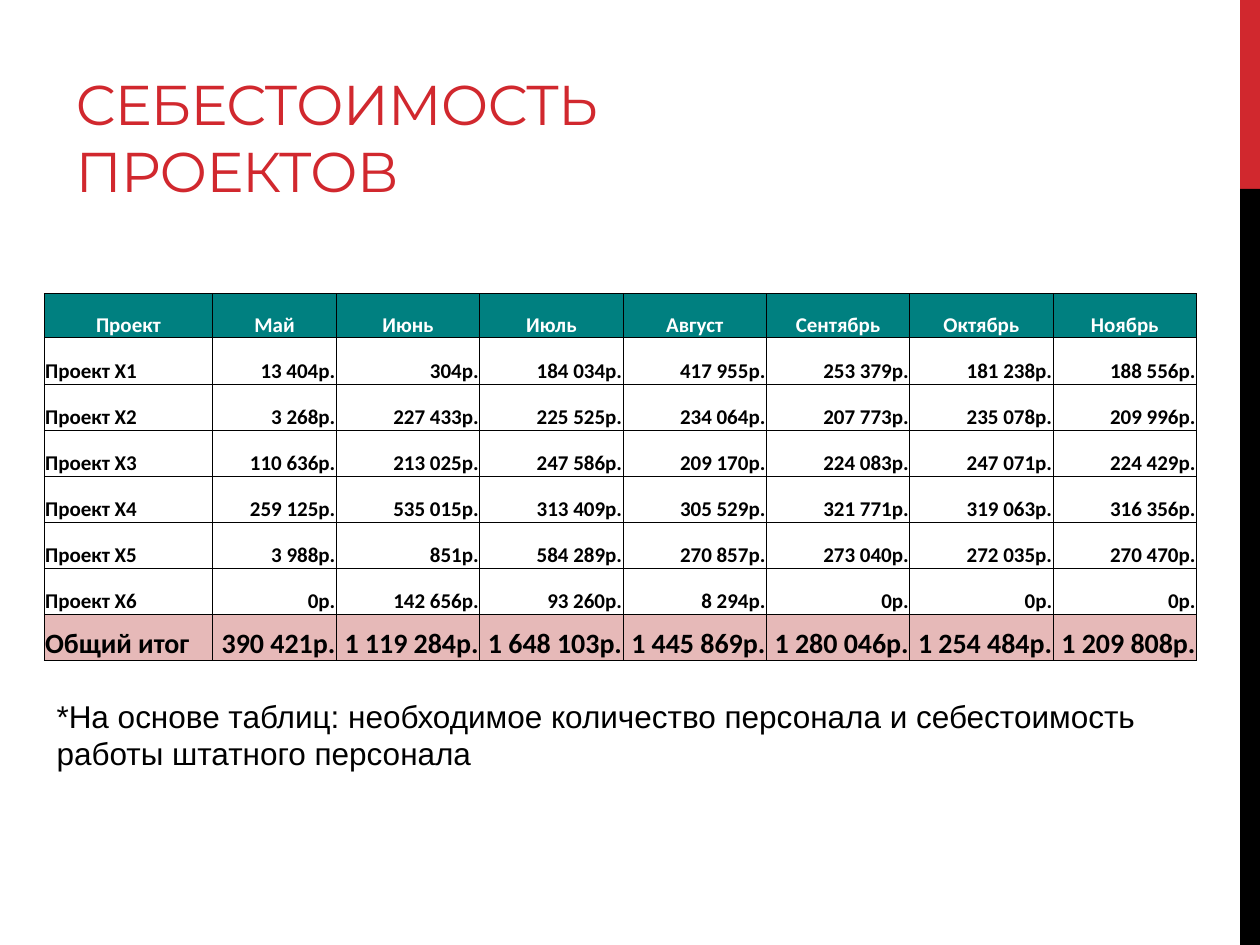
"""Build the slide with the monthly cost of each project."""
from lxml.etree import SubElement as Sub
from pptx import Presentation
from pptx.dml.color import RGBColor as RGB
from pptx.enum.shapes import MSO_SHAPE as Kind
from pptx.enum.text import MSO_ANCHOR as Anchor, PP_ALIGN as Align
from pptx.oxml.ns import qn
from pptx.util import Cm, Pt

RED = RGB(0xD1, 0x28, 0x2E)
BLACK = RGB(0, 0, 0)
WHITE = RGB(255, 255, 255)
TEAL = RGB(0, 0x80, 0x80)
PINK = RGB(0xE6, 0xB9, 0xB8)

HEAD = ["Проект", "Май", "Июнь", "Июль", "Август", "Сентябрь", "Октябрь", "Ноябрь"]
COSTS = [
    ("Проект Х1", 13404, 304, 184034, 417955, 253379, 181238, 188556),
    ("Проект Х2", 3268, 227433, 225525, 234064, 207773, 235078, 209996),
    ("Проект Х3", 110636, 213025, 247586, 209170, 224083, 247071, 224429),
    ("Проект Х4", 259125, 535015, 313409, 305529, 321771, 319063, 316356),
    ("Проект Х5", 3988, 851, 584289, 270857, 273040, 272035, 270470),
    ("Проект Х6", 0, 142656, 93260, 8294, 0, 0, 0),
    ("Общий итог", 390421, 1119284, 1648103, 1445869, 1280046, 1254484, 1209808),
]
ROWS = [HEAD] + [[name] + [f"{n:,}р.".replace(",", " ") for n in nums]
                 for name, *nums in COSTS]
WIDTHS = [3.4, 2.49] + [2.89] * 6
HEIGHTS = [0.89] + [0.93] * 7
CELL = {"vertical_anchor": Anchor.BOTTOM, "margin_left": Cm(0.02),
        "margin_right": Cm(0.02), "margin_top": Cm(0.02), "margin_bottom": 0}


def put(obj, vals):
    for key, val in vals.items():
        setattr(obj, key, val)


def write(frame, text, color, vals, align=Align.LEFT):
    para = frame.paragraphs[0]
    para.alignment = align
    run = para.add_run()
    run.text = text
    put(run.font, vals)
    run.font.color.rgb = color
    return run


deck = Presentation()
put(deck, {"slide_width": Cm(25.4), "slide_height": Cm(19.05)})
slide = deck.slides.add_slide(deck.slide_layouts[5])
shapes = slide.shapes

for top, high, color in [(0, 3.81, RED), (3.81, 15.24, BLACK)]:
    bar = shapes.add_shape(Kind.RECTANGLE, Cm(25), Cm(top), Cm(0.4), Cm(high))
    bar.shadow.inherit = False
    bar.fill.solid()
    bar.fill.fore_color.rgb = color
    bar.line.fill.background()

title = shapes.title
put(title, {"left": Cm(1.27), "top": Cm(0.43), "width": Cm(16.08), "height": Cm(3.81)})
put(title.text_frame, {"vertical_anchor": Anchor.BOTTOM, "word_wrap": True})
run = write(title.text_frame, "СЕБЕСТОИМОСТЬ ПРОЕКТОВ", RED,
            {"name": "Montserrat", "size": Pt(32)})
run.font._element.set("spc", "-60")

note = shapes.add_textbox(Cm(0.89), Cm(13.92), Cm(23.6), Cm(1.8)).text_frame
note.word_wrap = True
write(note, "*На основе таблиц: необходимое количество персонала и себестоимость "
      "работы штатного персонала", BLACK, {"name": "Arial", "size": Pt(18)})

table = shapes.add_table(len(ROWS), len(HEAD), Cm(0.89), Cm(5.92),
                         Cm(sum(WIDTHS)), Cm(sum(HEIGHTS))).table
put(table, {"first_row": False, "horz_banding": False})
for col, wide in zip(table.columns, WIDTHS):
    col.width = Cm(wide)
for row, high in zip(table.rows, HEIGHTS):
    row.height = Cm(high)

for i, texts in enumerate(ROWS):
    first, last = i == 0, i == len(ROWS) - 1
    back = TEAL if first else PINK if last else WHITE
    font = {"name": "Calibri", "size": Pt(16 if last else 12), "bold": True}
    for j, text in enumerate(texts):
        cell = table.cell(i, j)
        put(cell, CELL)
        align = Align.CENTER if first else Align.RIGHT if j else Align.LEFT
        write(cell.text_frame, text, WHITE if first else BLACK, font, align)
        props = cell._tc.get_or_add_tcPr()
        for side in ("lnL", "lnR", "lnT", "lnB"):
            edge = Sub(props, qn(f"a:{side}"), w=str(Pt(0.5)))
            Sub(Sub(edge, qn("a:solidFill")), qn("a:srgbClr"), val=str(BLACK))
        cell.fill.solid()
        cell.fill.fore_color.rgb = back

deck.save("out.pptx")
